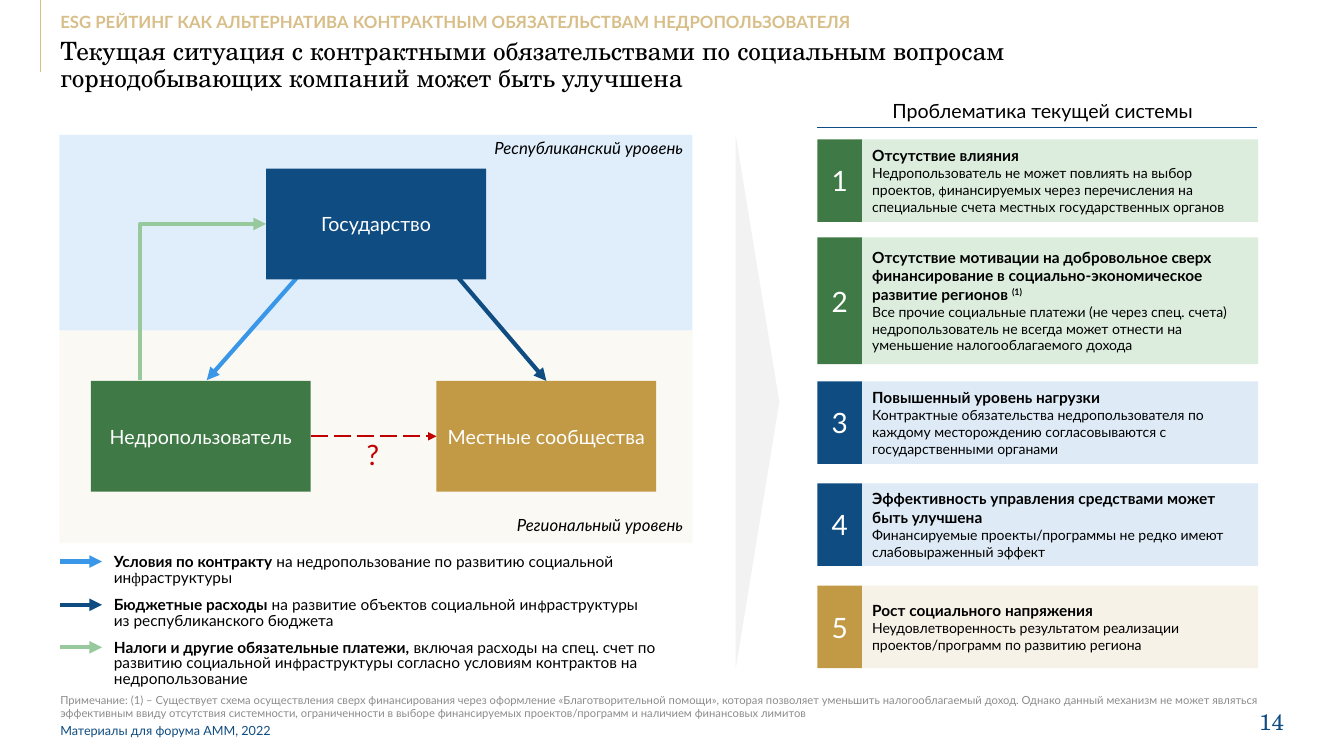
from lxml import etree
from pptx import Presentation
from pptx import util as u
from pptx.dml.color import RGBColor
from pptx.enum import dml, shapes, text
from pptx.oxml.ns import qn

GREEN, GOLD, NAVY, BLUE, MINT, RED = "3F7A46", "C29A46", "0F4C81", "3A97E8", "97C99D", "C00000"
SAND, BLACK, WHITE, GREY = "D8BE88", "000000", "FFFFFF", "8C8C8C"
SERIF = "TeX Gyre Schola"
LEFT, CENTER, RIGHT = text.PP_ALIGN.LEFT, text.PP_ALIGN.CENTER, text.PP_ALIGN.RIGHT
TOP, MIDDLE, BOTTOM = text.MSO_ANCHOR.TOP, text.MSO_ANCHOR.MIDDLE, text.MSO_ANCHOR.BOTTOM
NO_INSET = (0, 0, 0, 0)
PAD = (0.25, 0.13, 0.25, 0.13)

SECTION = "ESG РЕЙТИНГ КАК АЛЬТЕРНАТИВА КОНТРАКТНЫМ ОБЯЗАТЕЛЬСТВАМ НЕДРОПОЛЬЗОВАТЕЛЯ"
TITLE = ("Текущая ситуация с контрактными обязательствами по социальным вопросам "
         "горнодобывающих компаний может быть улучшена")
NOTE = ("Примечание: (1) – Существует схема осуществления сверх финансирования через оформление "
        "«Благотворительной помощи», которая позволяет уменьшить налогооблагаемый доход. Однако данный "
        "механизм не может являться эффективным ввиду отсутствия системности, ограниченности в выборе "
        "финансируемых проектов/программ и наличием финансовых лимитов")

LEVELS = [
    ("Республиканский уровень", 3.4, 4.93, "BDDCF7", 3.33),
    ("Региональный уровень", 8.33, 5.36, "F7F2E7", 12.85),
]
ACTORS = {
    "Недропользователь": (2.29, 9.6, GREEN),
    "Местные сообщества": (11, 9.6, GOLD),
    "Государство": (6.71, 4.25, NAVY),
}
BOLD = {"bold": True}
SMALL_F = ("ф", {"size": 9, "name": "Roboto"})
LEGEND = [
    (14.15, 0.91, BLUE, [[
        ("Условия по контракту", BOLD), (" на недропользование по развитию социальной ин", {}),
        ("ф", {"size": 10.5, "name": "Times New Roman"}), ("раструктуры", {})]]),
    (15.24, 0.91, NAVY, [[
        ("Бюджетные расходы", BOLD), (" на развитие объектов социальной ин", {}),
        SMALL_F, ("раструктуры", {})], "из республиканского бюджета"]),
    (16.31, 1.3, MINT, [[
        ("Налоги и другие обязательные платежи, ", BOLD),
        ("включая расходы на спец. счет по развитию социальной ин", {}), SMALL_F,
        ("раструктуры согласно условиям контрактов на недропользование", {})]]),
]
PROBLEMS = [
    (3.51, 2.08, GREEN, "DCEDDE", ["Отсутствие влияния"],
     [("Недропользователь не может повлиять на выбор проектов, ", {}),
      ("ф", {"size": 8, "name": "Roboto"}),
      ("инансируемых через перечисления на специальные счета местных государственных органов", {})]),
    (5.98, 3.2, GREEN, "DCEDDE",
     ["Отсутствие мотивации на добровольное сверх", "финансирование в социально-экономическое",
      [("развитие регионов ", {}), ("(1)", {"raised": True})]],
     "Все прочие социальные платежи (не через спец. счета) недропользователь не всегда может "
     "отнести на уменьшение налогооблагаемого дохода"),
    (9.61, 2.08, NAVY, "DEEBF7", ["Повышенный уровень нагрузки"],
     "Контрактные обязательства недропользователя по каждому месторождению согласовываются "
     "с государственными органами"),
    (12.18, 2.08, NAVY, "DEEBF7", ["Эффективность управления средствами может", "быть улучшена"],
     "Финансируемые проекты/программы не редко имеют слабовыраженный эффект"),
    (14.76, 2.08, GOLD, "F7F2E7", ["Рост социального напряжения"],
     "Неудовлетворенность результатом реализации проектов/программ по развитию региона"),
]

prs = Presentation()
prs.slide_width, prs.slide_height = u.Cm(33.87), u.Cm(19.05)
s = prs.slides.add_slide(prs.slide_layouts[6])


def rgb(color):
    return RGBColor.from_string(color)


def write(sp, paras, size, color=BLACK, font="Lato", align=LEFT, anchor=TOP, inset=PAD,
          bold=False, italic=False, spacing=None, wrap=True, new=True):
    tf = sp.text_frame
    tf.word_wrap, tf.vertical_anchor = wrap, anchor
    tf.margin_left, tf.margin_top, tf.margin_right, tf.margin_bottom = map(u.Cm, inset)
    for i, runs in enumerate(paras):
        p = tf.paragraphs[0] if new and i == 0 else tf.add_paragraph()
        p.alignment = align
        if spacing:
            p.line_spacing = spacing
        f = p.font
        f.size, f.name, f.bold, f.italic = u.Pt(size), font, bold, italic
        f.color.rgb = rgb(color)
        for words, style in [(runs, {})] if isinstance(runs, str) else runs:
            r = p.add_run()
            r.text = words
            if "size" in style:
                r.font.size, r.font.name = u.Pt(style["size"]), style["name"]
            if "bold" in style:
                r.font.bold = True
            if "raised" in style:
                r._r.get_or_add_rPr().set("baseline", "30000")


def label(x, y, w, h, paras, size, **style):
    write(s.shapes.add_textbox(*map(u.Cm, (x, y, w, h))), paras, size, **style)


def block(x, y, w, h, color, kind=shapes.MSO_SHAPE.RECTANGLE):
    sp = s.shapes.add_shape(kind, *map(u.Cm, (x, y, w, h)))
    sp.shadow.inherit = False
    sp.fill.solid()
    sp.fill.fore_color.rgb = rgb(color)
    sp.line.fill.background()
    return sp


def line(x1, y1, x2, y2, color, width, arrow=True, kind=shapes.MSO_CONNECTOR.STRAIGHT):
    c = s.shapes.add_connector(kind, *map(u.Cm, (x1, y1, x2, y2)))
    c.line.color.rgb, c.line.width = rgb(color), u.Pt(width)
    if arrow:
        etree.SubElement(c.line._get_or_add_ln(), qn("a:tailEnd"), type="triangle")
    etree.SubElement(c._element.spPr, qn("a:effectLst"))
    return c


line(1.02, 0, 1.02, 1.81, SAND, 1.25, arrow=False)
label(1.52, 18.21, 17, 0.38, ["Материалы для форума АММ, 2022"], 9, color=NAVY, anchor=MIDDLE, inset=NO_INSET)
label(1.52, 0.97, 28.22, 1.4, [TITLE], 18, font=SERIF, inset=NO_INSET, spacing=0.9)
label(1.52, 0.36, 28.22, 0.46, [SECTION], 12, color=SAND, bold=True, inset=NO_INSET, spacing=0.9)

for name, y, h, color, name_y in LEVELS:
    panel = block(1.5, y, 15.95, h, color)
    tint = panel._element.spPr.find(qn("a:solidFill")).find(qn("a:srgbClr"))
    etree.SubElement(tint, qn("a:alpha"), val="46000")
    label(11.24, name_y, 6.23, 0.76, [name], 12, align=RIGHT, italic=True)

to_communities = line(11.56, 7.01, 13.77, 9.6, NAVY, 3)
line(7.54, 6.93, 5.21, 9.58, BLUE, 3)

actor = {}
for name, (x, y, color) in ACTORS.items():
    actor[name] = block(x, y, 5.54, 2.79, color)
    write(actor[name], [name], 14, color=WHITE, align=CENTER, anchor=MIDDLE)
to_communities.end_connect(actor["Местные сообщества"], 0)

gap = line(7.83, 11, 11, 11, RED, 1.5)
gap.line.dash_style = dml.MSO_LINE.LONG_DASH
gap.begin_connect(actor["Недропользователь"], 3)
gap.end_connect(actor["Местные сообщества"], 1)
label(8.99, 10.9, 0.84, 1.12, ["?"], 20, color=RED)

taxes = line(7.08, 9.2, 3.15, 6.02, MINT, 3, kind=shapes.MSO_CONNECTOR.ELBOW)
taxes._element.spPr.find(qn("a:prstGeom")).set("prst", "bentConnector2")
taxes._element.spPr.find(qn("a:xfrm")).set("rot", "5400000")

for y, h, color, paras in LEGEND:
    line(1.52, y, 2.57, y, color, 3)
    label(2.87, y - 0.27, 14.55, h, paras, 11, inset=(0, 0.1, 0, 0), spacing=0.85)

label(20.55, 2.39, 11.46, 0.81, ["Проблематика текущей системы"], 14,
      align=CENTER, anchor=MIDDLE, inset=NO_INSET, wrap=False)
line(20.6, 3.2, 31.67, 3.2, NAVY, 0.5, arrow=False)
pointer = block(18.54, 3.4, 1.1, 13.46, "F2F2F2", shapes.MSO_SHAPE.RIGHT_ARROW)
pointer.adjustments[0], pointer.adjustments[1] = 0.5, 1

for number, (y, h, dark, light, heads, body) in enumerate(PROBLEMS, 1):
    write(block(20.6, y, 1.13, h, dark), [str(number)], 20, color=WHITE, align=CENTER, anchor=MIDDLE)
    card = block(21.73, y, 9.98, h, light)
    write(card, heads, 11, bold=True, anchor=MIDDLE)
    write(card, [body], 10, anchor=MIDDLE, new=False)

label(31.19, 17.83, 1.17, 0.69, ["14"], 16, color=NAVY, font=SERIF, align=RIGHT, anchor=MIDDLE, inset=NO_INSET)
label(1.52, 17.45, 30.75, 0.69, [NOTE], 8, color=GREY, anchor=BOTTOM, inset=NO_INSET)

prs.save("out.pptx")
